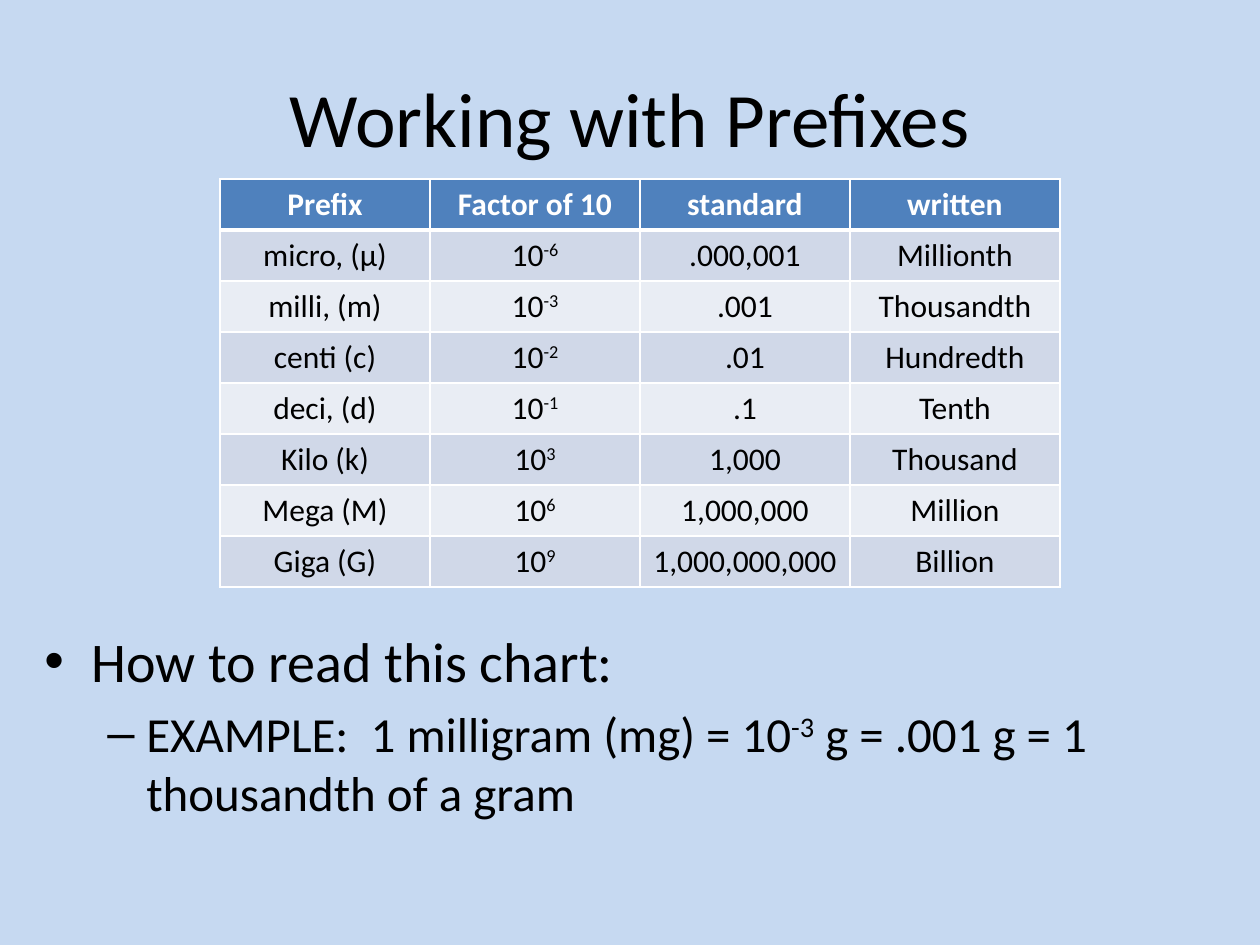
"""Build the slide on working with metric prefixes."""
import pptx
import pptx.dml.color
import pptx.enum.text
import pptx.oxml
import pptx.oxml.ns
import pptx.util

RGB = pptx.dml.color.RGBColor
ALIGN = pptx.enum.text.PP_ALIGN
ANCHOR = pptx.enum.text.MSO_ANCHOR
SKY = RGB(0xC6, 0xD9, 0xF1)
BLUE = RGB(0x4F, 0x81, 0xBD)
BAND_DARK = RGB(0xD0, 0xD8, 0xE8)
BAND_LIGHT = RGB(0xE9, 0xED, 0xF4)
BLACK = RGB(0, 0, 0)
WHITE = RGB(0xFF, 0xFF, 0xFF)

HEADERS = ["Prefix", "Factor of 10", "standard", "written"]
PREFIXES = [
    ("micro, (µ)", "-6", ".000,001", "Millionth"),
    ("milli, (m)", "-3", ".001", "Thousandth"),
    ("centi (c)", "-2", ".01", "Hundredth"),
    ("deci, (d)", "-1", ".1", "Tenth"),
    ("Kilo (k)", "3", "1,000", "Thousand"),
    ("Mega (M)", "6", "1,000,000", "Million"),
    ("Giga (G)", "9", "1,000,000,000", "Billion"),
]


def px(n):
    return pptx.util.Emu(round(n * 914400 / 126))


class Deck:
    font = "Calibri"

    def __init__(self, width, height):
        self.prs = pptx.Presentation()
        self.prs.slide_width, self.prs.slide_height = px(width), px(height)
        self.s = self.prs.slides.add_slide(self.prs.slide_layouts[6])
        self.s.background.fill.solid()
        self.s.background.fill.fore_color.rgb = SKY

    def runs(self, p, texts, size, color=BLACK, bold=False):
        """Add runs to a paragraph; every second one is superscript."""
        for i, text in enumerate(texts):
            r = p.add_run()
            r.text = text
            r.font.name, r.font.size = self.font, pptx.util.Pt(size)
            r.font.bold = bold
            r.font.color.rgb = color
            if i % 2:
                r.font._element.set("baseline", "30000")

    def text_box(self, x, y, w, h, anchor=ANCHOR.TOP):
        tf = self.s.shapes.add_textbox(px(x), px(y), px(w), px(h)).text_frame
        tf.word_wrap = True
        tf.vertical_anchor = anchor
        return tf

    def title(self, x, y, w, h, text):
        p = self.text_box(x, y, w, h, ANCHOR.MIDDLE).paragraphs[0]
        p.alignment = ALIGN.CENTER
        self.runs(p, [text], 44)

    def bullets(self, x, y, w, h, items):
        tf = self.text_box(x, y, w, h)
        for i, (char, margin, hang, size, texts) in enumerate(items):
            p = tf.add_paragraph() if i else tf.paragraphs[0]
            p.level = i
            p.space_before = pptx.util.Pt(size * 0.2)
            pPr = p._p.get_or_add_pPr()
            pPr.set("marL", str(px(margin)))
            pPr.set("indent", str(px(-hang)))
            ns = pptx.oxml.ns.nsdecls("a")
            pPr.append(pptx.oxml.parse_xml(f'<a:buFont {ns} typeface="Arial"/>'))
            pPr.append(pptx.oxml.parse_xml(f'<a:buChar {ns} char="{char}"/>'))
            self.runs(p, texts, size)

    def borders(self, cell, top, bottom):
        tcPr = cell._tc.get_or_add_tcPr()
        for side, width in zip("LRTB", (1, 1, top, bottom)):
            tcPr.append(pptx.oxml.parse_xml(
                f'<a:ln{side} {pptx.oxml.ns.nsdecls("a")} w="{pptx.util.Pt(width)}">'
                f'<a:solidFill><a:srgbClr val="{WHITE}"/></a:solidFill></a:ln{side}>'))

    def table(self, x, y, col_w, row_h, rows):
        n_rows, n_cols = len(rows), len(rows[0])
        table = self.s.shapes.add_table(
            n_rows, n_cols, px(x), px(y), px(col_w * n_cols), px(row_h * n_rows)).table
        for i, row in enumerate(rows):
            header = i == 0
            fill = BLUE if header else BAND_DARK if i % 2 else BAND_LIGHT
            for j, texts in enumerate(row):
                cell = table.cell(i, j)
                self.borders(cell, 3 if i == 1 else 1, 3 if header else 1)
                cell.fill.solid()
                cell.fill.fore_color.rgb = fill
                p = cell.text_frame.paragraphs[0]
                p.alignment = ALIGN.CENTER
                self.runs(p, texts, 18, WHITE if header else BLACK, header)


def main():
    deck = Deck(1260, 945)
    deck.title(63, 38, 1134, 158, "Working with Prefixes")
    deck.bullets(32, 620, 1207, 305, [
        ("•", 47, 47, 32, ["How to read this chart:"]),
        ("–", 102, 39, 28, ["EXAMPLE:  1 milligram (mg) = 10", "-3",
                            " g = .001 g = 1 thousandth of a gram"]),
    ])
    rows = [[[h] for h in HEADERS]]
    rows += [[[name], ["10", power], [standard], [written]]
             for name, power, standard, written in PREFIXES]
    deck.table(220, 179, 210, 51, rows)
    deck.prs.save("out.pptx")


if __name__ == "__main__":
    main()
